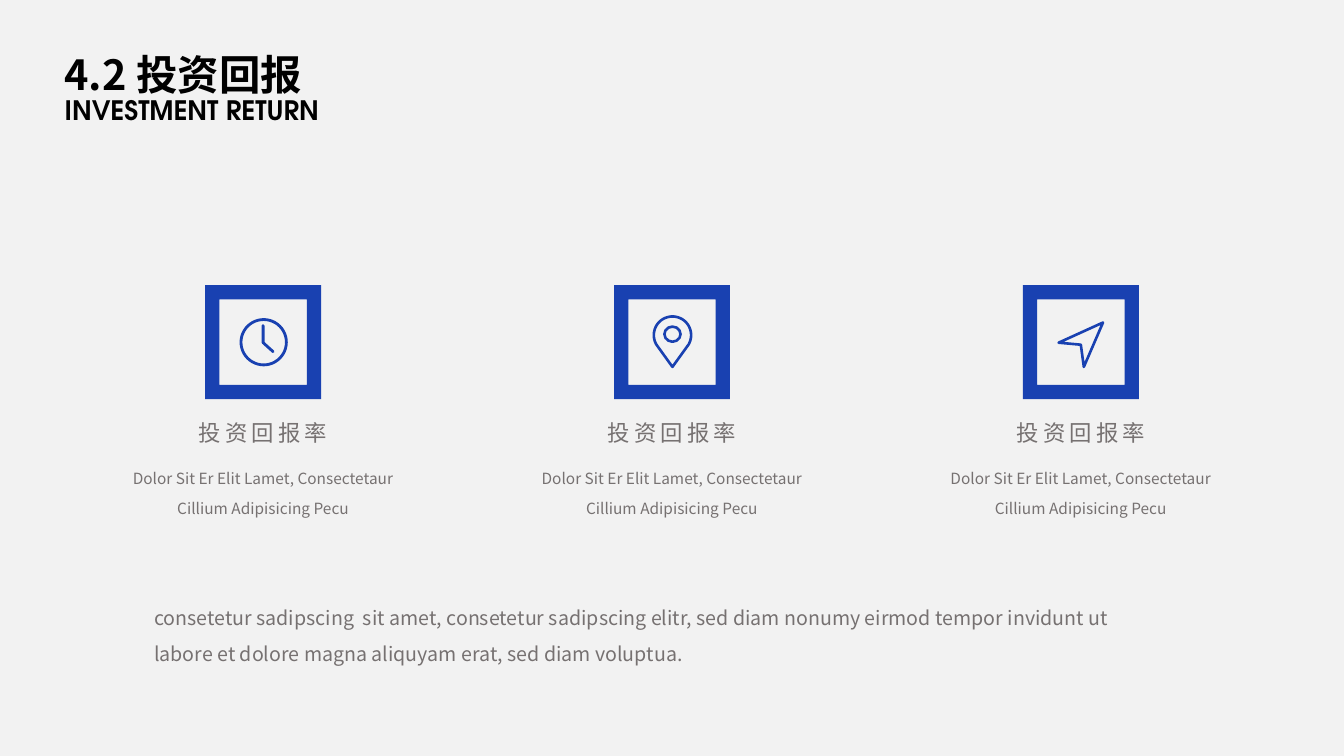
import math

import lxml.etree
import pptx
import pptx.dml.color
import pptx.enum.shapes
import pptx.enum.text
import pptx.oxml.ns
import pptx.util

Inches = pptx.util.Inches
Pt = pptx.util.Pt
SHAPES = pptx.enum.shapes.MSO_SHAPE
ALIGN = pptx.enum.text.PP_ALIGN
FIT = pptx.enum.text.MSO_AUTO_SIZE


def color(value):
    return pptx.dml.color.RGBColor.from_string(value)


class SlideBuilder:
    """Holds the slide and its style."""

    FONT = "Noto Sans CJK SC"
    LATIN_FONT = "TeX Gyre Adventor"
    BLUE = "1941B1"
    GRAY = "767171"
    BLACK = "000000"
    BACKGROUND = "F2F2F2"

    def __init__(self, slide):
        self.slide = slide
        fill = slide.background.fill
        fill.solid()
        fill.fore_color.rgb = color(self.BACKGROUND)

    def run(self, paragraph, text, size, text_color, font=FONT, bold=False, spacing=0):
        run = paragraph.add_run()
        run.text = text
        run.font.size = Pt(size)
        run.font.bold = bold
        run.font.name = font
        run.font.color.rgb = color(text_color)
        properties = run._r.get_or_add_rPr()
        east_asian = lxml.etree.SubElement(properties, pptx.oxml.ns.qn("a:ea"))
        east_asian.set("typeface", font)
        if spacing:
            properties.set("spc", str(spacing * 100))

    def title(self, box, lines):
        title = self.slide.shapes.title
        title.left, title.top, title.width, title.height = map(Inches, box)
        frame = title.text_frame
        frame.margin_left = frame.margin_top = frame.margin_right = 0
        frame.margin_bottom = Inches(0.05)
        frame.word_wrap = False
        frame.auto_size = FIT.SHAPE_TO_FIT_TEXT
        frame.vertical_anchor = pptx.enum.text.MSO_ANCHOR.TOP
        for index, (text, size, font, line_spacing) in enumerate(lines):
            paragraph = frame.add_paragraph() if index else frame.paragraphs[0]
            paragraph.alignment = ALIGN.LEFT
            paragraph.line_spacing = Pt(line_spacing)
            self.run(paragraph, text, size, self.BLACK, font, bold=True)

    def text(self, box, text, size, align=ALIGN.LEFT, line_spacing=None, spacing=0):
        frame = self.slide.shapes.add_textbox(*map(Inches, box)).text_frame
        frame.word_wrap = True
        frame.auto_size = FIT.SHAPE_TO_FIT_TEXT
        paragraph = frame.paragraphs[0]
        paragraph.alignment = align
        paragraph.line_spacing = line_spacing
        self.run(paragraph, text, size, self.GRAY, spacing=spacing)

    def outline(self, shape, width):
        shape.shadow.inherit = False
        shape.fill.background()
        shape.line.color.rgb = color(self.BLUE)
        shape.line.width = Pt(width)
        line = shape.line._get_or_add_ln()
        line.set("cap", "rnd")
        lxml.etree.SubElement(line, pptx.oxml.ns.qn("a:round"))

    def frame(self, box):
        shape = self.slide.shapes.add_shape(SHAPES.FRAME, *map(Inches, box))
        shape.shadow.inherit = False
        shape.fill.solid()
        shape.fill.fore_color.rgb = color(self.BLUE)
        shape.line.fill.background()

    def ring(self, box, width):
        shape = self.slide.shapes.add_shape(SHAPES.OVAL, *map(Inches, box))
        self.outline(shape, width)

    def path_line(self, points, width, close=True):
        start, *rest = [(Inches(x), Inches(y)) for x, y in points]
        builder = self.slide.shapes.build_freeform(*start)
        builder.add_line_segments(rest, close=close)
        self.outline(builder.convert_to_shape(), width)


def draw_clock(builder):
    builder.ring((2.39, 3.17, 0.45, 0.45), 2)
    builder.path_line([(2.61, 3.23), (2.61, 3.4), (2.71, 3.49)], 2, close=False)


def draw_pin(builder):
    # Round head from lower left over the top to lower right, then the tip
    angles = [math.radians(150 + 5 * step) for step in range(49)]
    head = [(6.67 + 0.185 * math.cos(a), 3.325 + 0.185 * math.sin(a)) for a in angles]
    builder.path_line(head + [(6.67, 3.64)], 1.88)
    builder.ring((6.59, 3.24, 0.16, 0.15), 1.88)


def draw_arrow(builder):
    builder.path_line([(10.75, 3.64), (10.94, 3.2), (10.5, 3.4), (10.72, 3.42)], 1.88)


def main():
    presentation = pptx.Presentation()
    presentation.slide_width = Inches(13.33)
    presentation.slide_height = Inches(7.5)
    slide = presentation.slides.add_slide(presentation.slide_layouts[5])
    builder = SlideBuilder(slide)

    # Heading
    builder.title((0.64, 0.45, 2.54, 0.85), [
        ("4.2 投资回报", 29.6, builder.FONT, 38.1),
        ("INVESTMENT RETURN", 19.1, builder.LATIN_FONT, 19.1),
    ])

    # Three columns: framed icon, label and description
    for column, draw_icon in enumerate((draw_clock, draw_pin, draw_arrow)):
        center = 2.61 + 4.055 * column
        builder.frame((center - 0.575, 2.83, 1.15, 1.13))
        draw_icon(builder)
        builder.text((center - 0.88, 4.11, 1.76, 0.37), "投资回报率", 16,
                     ALIGN.CENTER, spacing=3)
        builder.text((center - 1.655, 4.5, 3.31, 0.84),
                     "Dolor Sit Er Elit Lamet, Consectetaur Cillium Adipisicing Pecu",
                     11, ALIGN.CENTER, Pt(21))

    # Closing paragraph
    builder.text((1.43, 5.85, 9.86, 0.77),
                 "consetetur sadipscing  sit amet, consetetur sadipscing elitr, "
                 "sed diam nonumy eirmod tempor invidunt ut labore et dolore "
                 "magna aliquyam erat, sed diam voluptua.", 14, line_spacing=1.5)

    presentation.save("out.pptx")


if __name__ == "__main__":
    main()
